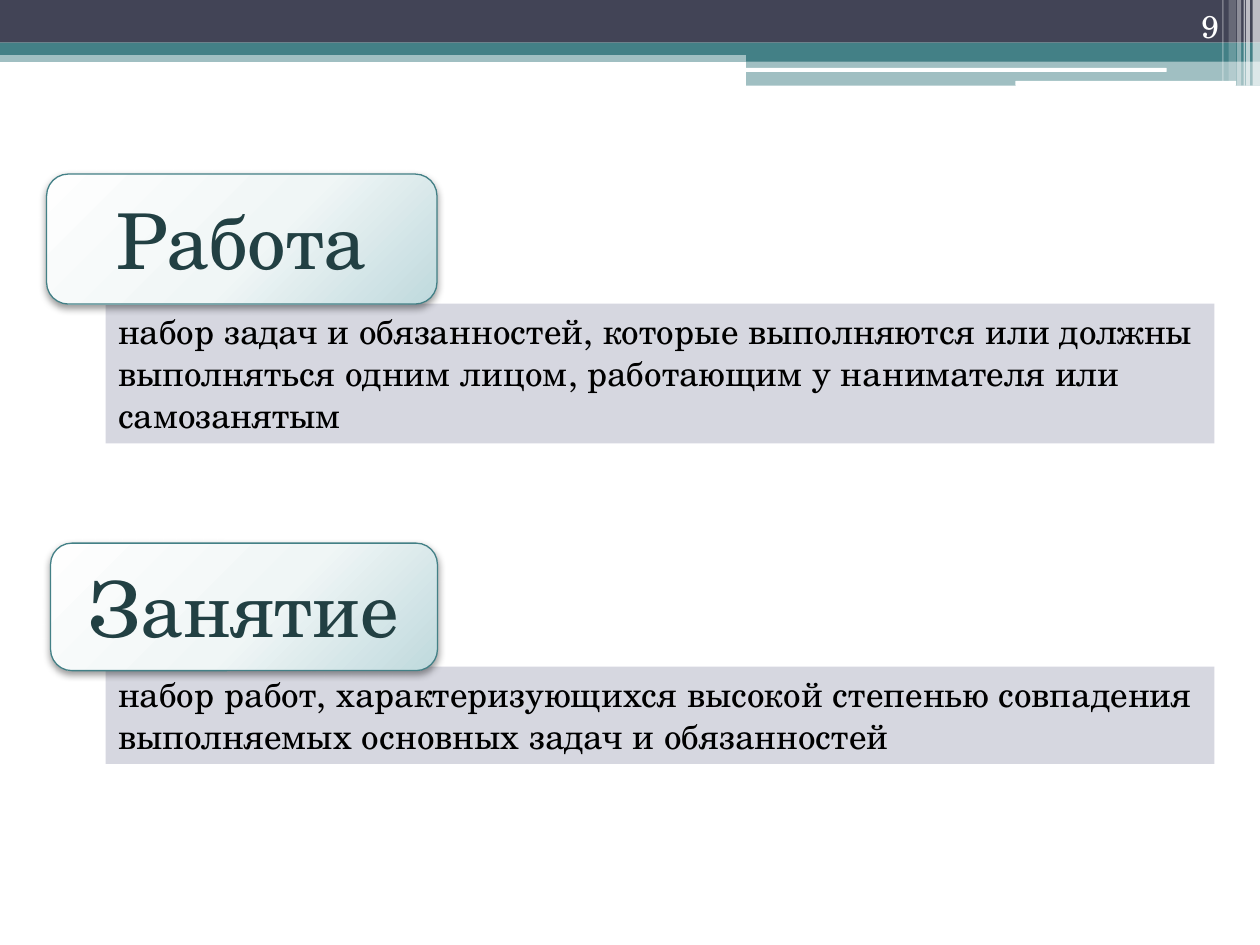
import pptx
import pptx.util
import pptx.oxml
import pptx.oxml.ns
import pptx.dml.color
import pptx.enum.shapes
import pptx.enum.text
from lxml import etree

Cm, Pt = pptx.util.Cm, pptx.util.Pt
Shape = pptx.enum.shapes.MSO_SHAPE
Align = pptx.enum.text.PP_ALIGN
Anchor = pptx.enum.text.MSO_ANCHOR
qn = pptx.oxml.ns.qn

FONT = "TeX Gyre Schola"
HUES = {
    "navy": "424456", "teal": "438086", "white": "FFFFFF", "black": "000000",
    "panel": "D6D7E0", "deep": "224043",
}
GLOW = [(0, "FEFEFE"), (55, "F0F6F6"), (100, "BFD9DD")]

WIDE = 25.4
HALF = 15.04
BANDS = [
    (Shape.RECTANGLE, (0, 1.02, WIDE, 0.23), "teal", 50),
    (Shape.RECTANGLE, (0, 0, WIDE, 0.86), "navy", 100),
    (Shape.RECTANGLE, (0, 0.86, WIDE, 0.25), "teal", 100),
    (Shape.RECTANGLE, (HALF, 0.99, WIDE - HALF, 0.25), "teal", 100),
    (Shape.RECTANGLE, (HALF, 1.22, WIDE - HALF, 0.51), "teal", 50),
    (Shape.ROUNDED_RECTANGLE, (15.01, 1.37, 8.51, 0.08), "white", 100),
    (Shape.ROUNDED_RECTANGLE, (20.47, 1.63, 4.45, 0.1), "white", 100),
]
STRIPES = [
    (25.25, 0.15, 1.73, 65), (25.12, 0.08, 1.73, 65), (25.07, 0.03, 1.73, 60),
    (24.94, 0.08, 1.73, 40), (24.77, 0.15, 1.63, 20), (24.64, 0.03, 1.63, 30),
]
PANELS = [
    (13.44, 1.96, "набор работ, характеризующихся высокой степенью совпадения "
     "выполняемых основных задач и обязанностей"),
    (6.12, 2.82, "набор задач и обязанностей, которые выполняются или должны "
     "выполняться одним лицом, работающим у нанимателя или самозанятым"),
]
CARDS = [
    ((1.02, 10.95, 7.8, 2.57), "Занятие"),
    ((0.94, 3.51, 7.87, 2.62), "Работа"),
]
PAGE = ((22.71, 0, 2.11, 1.02), "9")


def tint(name):
    return pptx.dml.color.RGBColor.from_string(HUES[name])


def add_box(slide, kind, place, hue=None, alpha=100):
    box = slide.shapes.add_shape(kind, *map(Cm, place))
    box.shadow.inherit = False
    box.line.fill.background()
    if hue:
        box.fill.solid()
        box.fill.fore_color.rgb = tint(hue)
    if alpha < 100:
        clr = box.fill._xPr.find(".//" + qn("a:srgbClr"))
        etree.SubElement(clr, qn("a:alpha"), val=str(alpha * 1000))
    return box


def write(box, text, size, hue, align, anchor):
    frame = box.text_frame
    frame.text = text
    frame.word_wrap = True
    frame.vertical_anchor = anchor
    para = frame.paragraphs[0]
    para.alignment = align
    font = para.runs[0].font
    font.name, font.size, font.color.rgb = FONT, Pt(size), tint(hue)


def add_glow(box):
    stops = "".join(
        f'<a:gs pos="{pos * 1000}"><a:srgbClr val="{hue}"/></a:gs>'
        for pos, hue in GLOW)
    space = pptx.oxml.ns.nsdecls("a")
    grad = pptx.oxml.parse_xml(
        f'<a:gradFill {space} rotWithShape="1"><a:gsLst>{stops}</a:gsLst>'
        '<a:path path="circle"><a:fillToRect l="-40000" t="-90000" '
        'r="140000" b="190000"/></a:path></a:gradFill>')
    props = box._element.spPr
    props.find(qn("a:prstGeom")).addnext(grad)
    shade = pptx.oxml.parse_xml(
        f'<a:outerShdw {space} blurRad="{Pt(4.1)}" dist="{Pt(2)}" '
        'dir="5400000" rotWithShape="0"><a:srgbClr val="000000">'
        '<a:alpha val="40000"/></a:srgbClr></a:outerShdw>')
    props.find(qn("a:effectLst")).append(shade)


def main():
    deck = pptx.Presentation()
    deck.slide_width, deck.slide_height = Cm(WIDE), Cm(19.05)
    slide = deck.slides.add_slide(deck.slide_layouts[6])

    for band in BANDS:
        add_box(slide, *band)
    for left, width, height, alpha in STRIPES:
        add_box(slide, Shape.RECTANGLE, (left, 0, width, height), "white", alpha)

    for top, height, text in PANELS:
        box = add_box(slide, Shape.RECTANGLE, (2.13, top, 22.35, height), "panel")
        write(box, text, 20, "black", Align.LEFT, Anchor.TOP)
        box.text_frame.auto_size = pptx.enum.text.MSO_AUTO_SIZE.SHAPE_TO_FIT_TEXT

    for place, text in CARDS:
        card = add_box(slide, Shape.ROUNDED_RECTANGLE, place)
        add_glow(card)
        card.line.color.rgb = tint("teal")
        card.line.width = Pt(0.75)
        write(card, text, 44, "deep", Align.CENTER, Anchor.MIDDLE)

    place, text = PAGE
    page = slide.shapes.add_textbox(*map(Cm, place))
    write(page, text, 18, "white", Align.RIGHT, Anchor.BOTTOM)

    deck.save("out.pptx")


if __name__ == "__main__":
    main()
